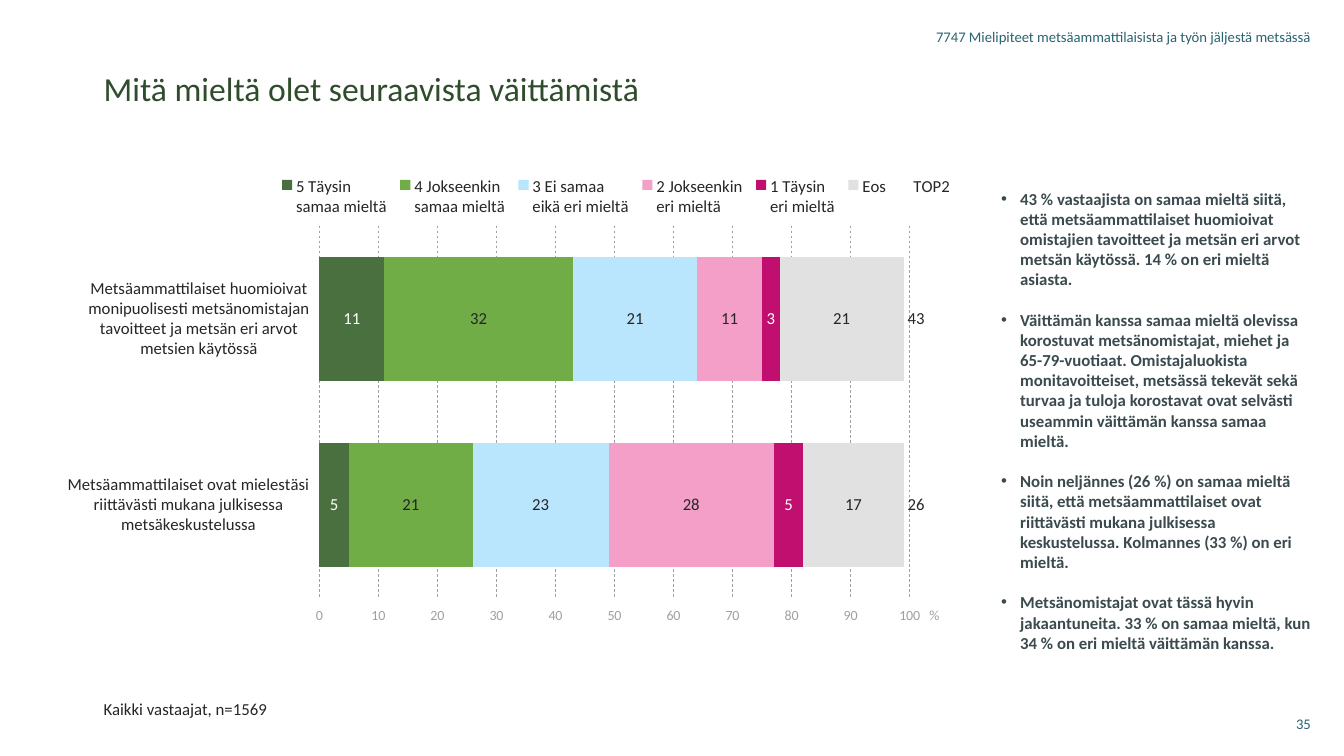
"""Build a survey slide with a stacked bar chart of opinions and a summary list."""
from lxml import etree
from pptx import Presentation, util as u
from pptx.chart.data import CategoryChartData
from pptx.dml.color import RGBColor
from pptx.enum import chart as charts, dml, text
from pptx.oxml.ns import qn

COLOURS = {
    "teal": "2A6471", "title": "2F4D2D", "ink": "262626", "slate": "3A4A4E",
    "grey": "A0A0A0", "white": "FFFFFF", "dark green": "4A7040", "green": "70AD47",
    "blue": "B9E6FD", "pink": "F39FC7", "magenta": "C10F70", "silver": "E1E1E1",
}
CHART_WIDTH, CHART_HEIGHT = 8.97, 4.56


def style(font, size, colour, bold=False):
    font.name, font.size, font.bold = "Calibri", u.Pt(size), bold
    font.color.rgb = RGBColor.from_string(COLOURS[colour])


def arrange(element, index, target=None, **inches):
    for old in element.findall(qn("c:layout")):
        element.remove(old)
    layout = etree.Element(qn("c:layout"))
    manual = etree.SubElement(layout, qn("c:manualLayout"))
    if target:
        etree.SubElement(manual, qn("c:layoutTarget"), val=target)
    for mode in ("xMode", "yMode"):
        etree.SubElement(manual, qn(f"c:{mode}"), val="edge")
    for name, length in inches.items():
        whole = CHART_WIDTH if name in "xw" else CHART_HEIGHT
        etree.SubElement(manual, qn(f"c:{name}"), val=str(length / whole))
    element.insert(index, layout)


deck = Presentation()
deck.slide_width, deck.slide_height = u.Inches(13.33), u.Inches(7.5)
page = deck.slides.add_slide(deck.slide_layouts[6])

left, right = text.PP_ALIGN.LEFT, text.PP_ALIGN.RIGHT
top, middle = text.MSO_ANCHOR.TOP, text.MSO_ANCHOR.MIDDLE
captions = [
    ("7747 Mielipiteet metsäammattilaisista ja työn jäljestä metsässä",
     (8.6, 0.16, 4.5, 0.4), 10.5, "teal", right, middle, 1.0),
    ("35", (12.66, 6.98, 0.44, 0.4), 10.5, "teal", right, middle, 1.0),
    ("Mitä mieltä olet seuraavista väittämistä",
     (0.93, 0.62, 10.84, 0.62), 24, "title", left, top, 1.0),
    ("Kaikki vastaajat, n=1569",
     (0.93, 6.91, 9.18, 0.28), 12, "ink", left, top, 0.9),
]
for words, place, size, colour, align, anchor, spacing in captions:
    box = page.shapes.add_textbox(*map(u.Inches, place))
    box.text_frame.word_wrap = True
    box.text_frame.vertical_anchor = anchor
    para = box.text_frame.paragraphs[0]
    para.text, para.alignment, para.line_spacing = words, align, spacing
    style(para.font, size, colour)

answers = [
    ("5 Täysin\nsamaa mieltä", (11, 5), "dark green", "white"),
    ("4 Jokseenkin\nsamaa mieltä", (32, 21), "green", "ink"),
    ("3 Ei samaa\neikä eri mieltä", (21, 23), "blue", "ink"),
    ("2 Jokseenkin\neri mieltä", (11, 28), "pink", "ink"),
    ("1 Täysin\neri mieltä", (3, 5), "magenta", "white"),
    ("Eos", (21, 17), "silver", "ink"),
    ("TOP2", (43, 26), None, "ink"),
]
data = CategoryChartData()
data.categories = [
    "Metsäammattilaiset huomioivat monipuolisesti metsänomistajan tavoitteet "
    "ja metsän eri arvot metsien käytössä",
    "Metsäammattilaiset ovat mielestäsi riittävästi mukana julkisessa metsäkeskustelussa",
]
for name, values, fill, label in answers:
    data.add_series(name, values)

chart = page.shapes.add_chart(
    charts.XL_CHART_TYPE.BAR_STACKED,
    *map(u.Inches, (0.67, 1.67, CHART_WIDTH, CHART_HEIGHT)), data).chart
style(chart.font, 12, "slate")
chart.has_title = False
chart.has_legend = True
chart.legend.position = charts.XL_LEGEND_POSITION.TOP
chart.legend.include_in_layout = False
style(chart.legend.font, 12, "ink")
arrange(chart.legend._element, 1, x=2.02, y=0.05, w=6.81, h=0.46)
arrange(chart._chartSpace.find(".//" + qn("c:plotArea")), 0, "inner",
        x=2.47, y=0.57, w=5.88, h=3.7)

plot = chart.plots[0]
plot.gap_width, plot.overlap, plot.vary_by_categories = 50, 100, False
for series, (name, values, fill, label) in zip(plot.series, answers):
    labels = series.data_labels
    labels.show_value = True
    labels.number_format, labels.number_format_is_linked = "#,##0", False
    style(labels.font, 12, label)
    if fill:
        series.format.fill.solid()
        series.format.fill.fore_color.rgb = RGBColor.from_string(COLOURS[fill])
        labels.position = charts.XL_LABEL_POSITION.CENTER
    else:
        series.format.fill.background()
        labels.position = charts.XL_LABEL_POSITION.INSIDE_BASE

statements, scale = chart.category_axis, chart.value_axis
for axis, size, colour in ((statements, 12, "ink"), (scale, 10, "grey")):
    axis.major_tick_mark = axis.minor_tick_mark = charts.XL_TICK_MARK.NONE
    axis.format.line.fill.background()
    style(axis.tick_labels.font, size, colour)
statements.reverse_order = True
statements.tick_label_position = charts.XL_TICK_LABEL_POSITION.LOW
scale.tick_label_position = charts.XL_TICK_LABEL_POSITION.HIGH
scale.minimum_scale, scale.maximum_scale, scale.major_unit = 0, 100.01, 10
scale.tick_labels.number_format = "General"
scale.tick_labels.number_format_is_linked = False
scale.has_major_gridlines = True
grid = scale.major_gridlines.format.line
grid.color.rgb = RGBColor.from_string(COLOURS["grey"])
grid.width, grid.dash_style = u.Pt(0.5), dml.MSO_LINE.DASH
unit = scale.axis_title.text_frame.paragraphs[0]
unit.text = "%"
style(unit.runs[0].font, 10, "grey")
arrange(scale.axis_title._element, 1, x=8.52, y=4.33)

findings = [
    "43 % vastaajista on samaa mieltä siitä, että metsäammattilaiset huomioivat "
    "omistajien tavoitteet ja metsän eri arvot metsän käytössä. 14 % on eri mieltä asiasta.",
    "Väittämän kanssa samaa mieltä olevissa korostuvat metsänomistajat, miehet ja "
    "65-79-vuotiaat. Omistajaluokista monitavoitteiset, metsässä tekevät sekä turvaa ja "
    "tuloja korostavat ovat selvästi useammin väittämän kanssa samaa mieltä.",
    "Noin neljännes (26 %) on samaa mieltä siitä, että metsäammattilaiset ovat "
    "riittävästi mukana julkisessa keskustelussa. Kolmannes (33 %) on eri mieltä.",
    "Metsänomistajat ovat tässä hyvin jakaantuneita. 33 % on samaa mieltä, kun "
    "34 % on eri mieltä väittämän kanssa.",
]
summary = page.shapes.add_textbox(*map(u.Inches, (9.83, 1.82, 3.29, 4.95))).text_frame
summary.word_wrap = True
summary.auto_size = text.MSO_AUTO_SIZE.SHAPE_TO_FIT_TEXT
for index, finding in enumerate(findings):
    para = summary.add_paragraph() if index else summary.paragraphs[0]
    para.text = finding
    if index:
        para.space_before = u.Pt(14.5)
    properties = para._p.get_or_add_pPr()
    properties.set("marL", str(u.Inches(0.19)))
    properties.set("indent", str(u.Inches(-0.19)))
    etree.SubElement(properties, qn("a:buFont"), typeface="Arial")
    etree.SubElement(properties, qn("a:buChar"), char="•")
    style(para.font, 12, "slate", bold=True)

deck.save("out.pptx")
